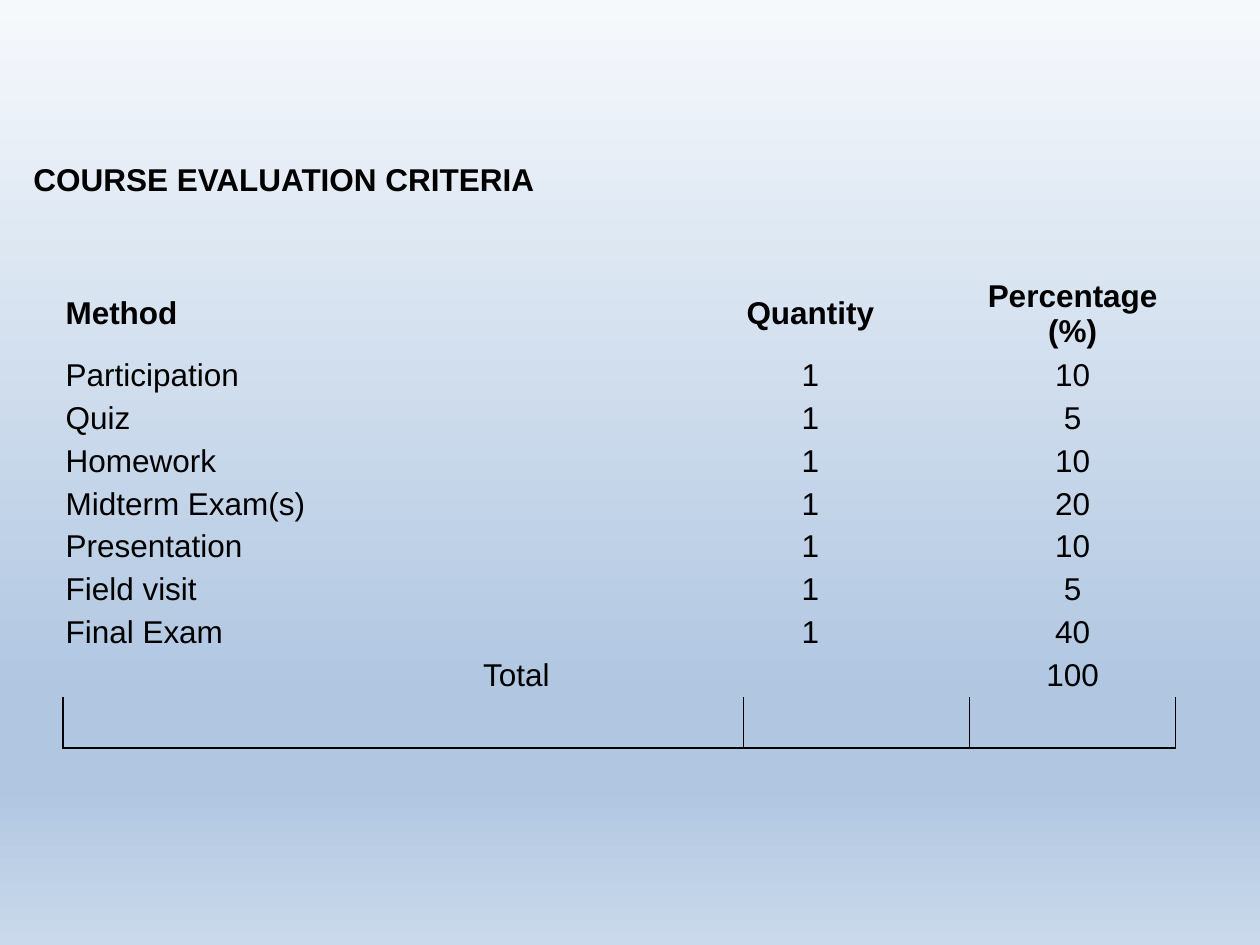
"""Build the course evaluation criteria slide."""
from lxml import etree
from pptx import Presentation
from pptx.dml.color import RGBColor
from pptx.enum.text import MSO_ANCHOR, MSO_AUTO_SIZE, PP_ALIGN
from pptx.oxml.ns import qn
from pptx.util import Pt

BLACK = RGBColor(0, 0, 0)
PALE = RGBColor(0xF6, 0xF9, 0xFC)
BLUE = RGBColor(0xB0, 0xC6, 0xE1)
LIGHT = RGBColor(0xCA, 0xD9, 0xEB)
LEFT, CENTER = PP_ALIGN.LEFT, PP_ALIGN.CENTER
MIDDLE = MSO_ANCHOR.MIDDLE
GROW = MSO_AUTO_SIZE.SHAPE_TO_FIT_TEXT
NO_STYLE = "{2D5ABB26-0587-4C30-8999-92F81FD0307C}"

STOPS = [(0, PALE), (74, BLUE), (83, BLUE), (100, LIGHT)]
WIDTHS = [336, 52.8, 129.4, 117.6]
HEIGHTS = [46.2] + [24.5] * 8 + [29]
ROWS = [
    ("Method", "Quantity", "Percentage (%)"),
    ("Participation", "1", "10"),
    ("Quiz", "1", "5"),
    ("Homework", "1", "10"),
    ("Midterm Exam(s)", "1", "20"),
    ("Presentation", "1", "10"),
    ("Field visit", "1", "5"),
    ("Final Exam", "1", "40"),
]


def write(frame, text, bold=False, align=LEFT):
    para = frame.paragraphs[0]
    para.alignment = align
    run = para.add_run()
    run.text = text
    run.font.name = "Arial"
    run.font.size = Pt(18)
    run.font.bold = bold
    run.font.color.rgb = BLACK


def border(cell, side):
    line = etree.SubElement(cell._tc.get_or_add_tcPr(), qn(f"a:ln{side}"), w=str(Pt(1)))
    fill = etree.SubElement(line, qn("a:solidFill"))
    etree.SubElement(fill, qn("a:srgbClr"), val=str(BLACK))


prs = Presentation()
prs.slide_width, prs.slide_height = Pt(720), Pt(540)
slide = prs.slides.add_slide(prs.slide_layouts[6])

back = slide.background.fill
back.gradient()
back.gradient_angle = 270
stops = slide.element.find(".//" + qn("a:gsLst"))
stops.clear()
for place, color in STOPS:
    stop = etree.SubElement(stops, qn("a:gs"), pos=str(place * 1000))
    etree.SubElement(stop, qn("a:srgbClr"), val=str(color))

frame = slide.shapes.add_table(
    len(HEIGHTS), len(WIDTHS), Pt(36), Pt(156.2), Pt(sum(WIDTHS)), Pt(sum(HEIGHTS)))
table = frame.table
table.first_row = table.horz_banding = False
table._tbl.tblPr.find(qn("a:tableStyleId")).text = NO_STYLE
for col, width in zip(table.columns, WIDTHS):
    col.width = Pt(width)
for row, height in zip(table.rows, HEIGHTS):
    row.height = Pt(height)

for r, (method, count, share) in enumerate(ROWS):
    table.cell(r, 1).merge(table.cell(r, 2))
    write(table.cell(r, 0).text_frame, method, bold=r == 0)
    write(table.cell(r, 1).text_frame, count, bold=r == 0, align=CENTER)
    write(table.cell(r, 3).text_frame, share, bold=r == 0, align=CENTER)

total = len(ROWS)
table.cell(total, 0).merge(table.cell(total, 2))
write(table.cell(total, 0).text_frame, "Total", align=CENTER)
write(table.cell(total, 3).text_frame, "100", align=CENTER)

last = total + 1
table.cell(last, 0).merge(table.cell(last, 1))
for c in (0, 2, 3):
    for side in "LRB":
        border(table.cell(last, c), side)

for cell in table.iter_cells():
    cell.fill.background()
    cell.vertical_anchor = MIDDLE
    cell.margin_left = cell.margin_right = Pt(1.5)
    cell.margin_top = cell.margin_bottom = Pt(1.5)

title = slide.shapes.add_textbox(Pt(12), Pt(88), Pt(660), Pt(29)).text_frame
title.word_wrap = True
title.auto_size = GROW
title.vertical_anchor = MIDDLE
write(title, "COURSE EVALUATION CRITERIA", bold=True)

prs.save("out.pptx")
